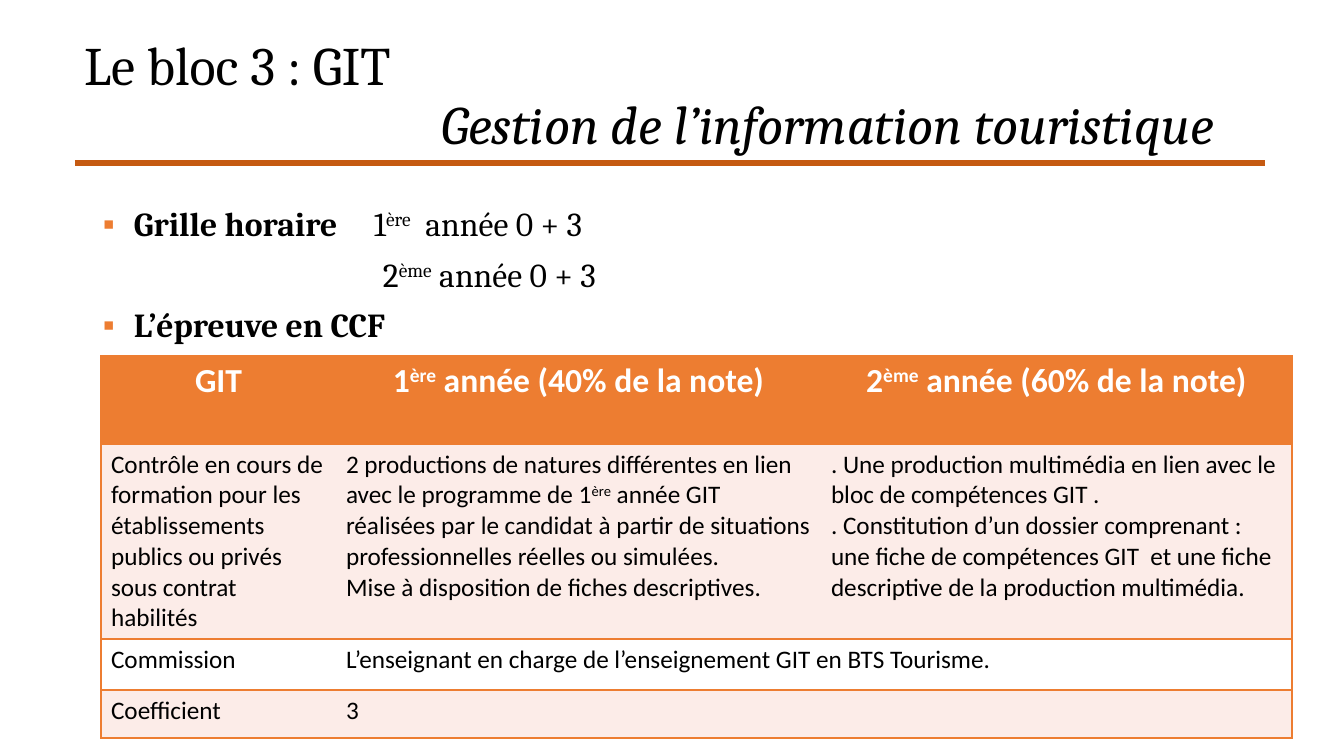
from lxml.etree import SubElement
from pptx import Presentation
from pptx.dml.color import RGBColor
from pptx.enum.shapes import MSO_CONNECTOR
from pptx.enum.text import MSO_ANCHOR, MSO_AUTO_SIZE, PP_ALIGN
from pptx.oxml.ns import qn
from pptx.util import Emu, Pt

BLACK = RGBColor(0x00, 0x00, 0x00)
WHITE = RGBColor(0xFF, 0xFF, 0xFF)
ORANGE = RGBColor(0xED, 0x7D, 0x31)
RUST = RGBColor(0xC5, 0x5A, 0x11)
BLUSH = RGBColor(0xFC, 0xEC, 0xE8)

PLAIN = "{2D5ABB26-0587-4C30-8999-92F81FD0307C}"
COLS = (235, 485, 471)
ROWS = (88, 195, 51, 48)
CELLS = (
    ("GIT", "1^ère^ année (40% de la note)", "2^ème^ année (60% de la note)"),
    (
        "Contrôle en cours de formation pour les établissements publics ou privés "
        "sous contrat habilités",
        "2 productions de natures différentes en lien avec le programme de "
        "1^ère^ année GIT réalisées par le candidat à partir de situations "
        "professionnelles réelles ou simulées.\n"
        "Mise à disposition de fiches descriptives.",
        ". Une production multimédia en lien avec le bloc de compétences GIT .\n"
        ". Constitution d’un dossier comprenant : une fiche de compétences GIT  "
        "et une fiche descriptive de la production multimédia.",
    ),
    ("Commission", "L’enseignant en charge de l’enseignement GIT en BTS Tourisme."),
    ("Coefficient", "3"),
)


def px(count):
    return Emu(round(count * 914400 / 100.8))


def add_text(para, text, size=24, font="Cambria", color=BLACK, bold=False,
             italic=False, align=PP_ALIGN.LEFT, space=None, before=0):
    para.alignment = align
    para.line_spacing = space
    para.space_before = Pt(before)
    for index, part in enumerate(text.split("^")):
        run = para.add_run()
        run.text = part
        run.font.size = Pt(size)
        run.font.name = font
        run.font.color.rgb = color
        run.font.bold = bold
        run.font.italic = italic
        if index % 2:
            run.font._element.set("baseline", "30000")


def indent(para, left, first=0):
    props = para._p.get_or_add_pPr()
    props.set("marL", str(px(left)))
    props.set("indent", str(px(first)))


def add_mark(para):
    indent(para, 31, -31)
    props = para._p.get_or_add_pPr()
    SubElement(SubElement(props, qn("a:buClr")), qn("a:srgbClr"), val=str(ORANGE))
    SubElement(props, qn("a:buFont"), typeface="Arial")
    SubElement(props, qn("a:buChar"), char="▪")


def add_box(slide, left, top, width, height):
    frame = slide.shapes.add_textbox(*map(px, (left, top, width, height))).text_frame
    frame.word_wrap = True
    return frame


def add_title(slide):
    title = slide.shapes.title
    title.left, title.top, title.width, title.height = map(px, (74, 32, 1190, 131))
    frame = title.text_frame
    frame.auto_size = MSO_AUTO_SIZE.NONE
    frame.vertical_anchor = MSO_ANCHOR.MIDDLE
    add_text(frame.paragraphs[0], "Le bloc 3 : GIT", size=38.7, space=0.9)
    theme = frame.add_paragraph()
    add_text(theme, "Gestion de l’information touristique",
             size=38.7, italic=True, space=0.9)
    indent(theme, 357)


def add_rule(slide):
    rule = slide.shapes.add_connector(
        MSO_CONNECTOR.STRAIGHT, px(75), px(163), px(1265), px(163))
    rule.line.color.rgb = RUST
    rule.line.width = Pt(4.5)
    SubElement(rule._element.spPr, qn("a:effectLst"))


def add_head(slide, text, top, width):
    para = add_box(slide, 93, top, width, 46).paragraphs[0]
    add_text(para, text, bold=True, space=0.9)
    add_mark(para)


def add_years(slide):
    frame = add_box(slide, 364, 203, 400, 100)
    add_text(frame.paragraphs[0], "1^ère^  année 0 + 3", space=0.9)
    second = frame.add_paragraph()
    add_text(second, "2^ème^ année 0 + 3", space=0.9, before=10)
    indent(second, 9)


def paint(cell, sides, tint):
    props = cell._tc.get_or_add_tcPr()
    for side in sides:
        line = SubElement(props, qn("a:ln" + side), w=str(Pt(1)))
        fill = SubElement(line, qn("a:solidFill"))
        SubElement(fill, qn("a:srgbClr"), val=str(ORANGE))
    cell.fill.solid()
    cell.fill.fore_color.rgb = tint


def add_grid(slide):
    frame = slide.shapes.add_table(
        len(ROWS), len(COLS), px(101), px(356), px(sum(COLS)), px(sum(ROWS)))
    table = frame.table
    table._tbl.tblPr.find(qn("a:tableStyleId")).text = PLAIN
    table.horz_banding = False
    for col, width in zip(table.columns, COLS):
        col.width = px(width)
    for row, height in zip(table.rows, ROWS):
        row.height = px(height)
    for r, texts in enumerate(CELLS):
        head = r == 0
        look = (dict(size=24, color=WHITE, bold=True, align=PP_ALIGN.CENTER)
                if head else dict(size=18))
        tint = ORANGE if head else BLUSH if r % 2 else WHITE
        wide = len(texts) < len(COLS)
        if wide:
            table.cell(r, 1).merge(table.cell(r, 2))
        for c, sides in enumerate(("LTB", "RTB" if wide else "TB", "RTB")):
            paint(table.cell(r, c), sides, tint)
        for c, text in enumerate(texts):
            body = table.cell(r, c).text_frame
            for n, line in enumerate(text.split("\n")):
                para = body.add_paragraph() if n else body.paragraphs[0]
                add_text(para, line, font="Calibri", **look)


def main():
    deck = Presentation()
    deck.slide_width, deck.slide_height = px(1344), px(756)
    slide = deck.slides.add_slide(deck.slide_layouts[5])
    add_title(slide)
    add_rule(slide)
    add_head(slide, "Grille horaire", 203, 270)
    add_years(slide)
    add_head(slide, "L’épreuve en CCF", 304, 400)
    add_grid(slide)
    deck.save("out.pptx")


if __name__ == "__main__":
    main()
